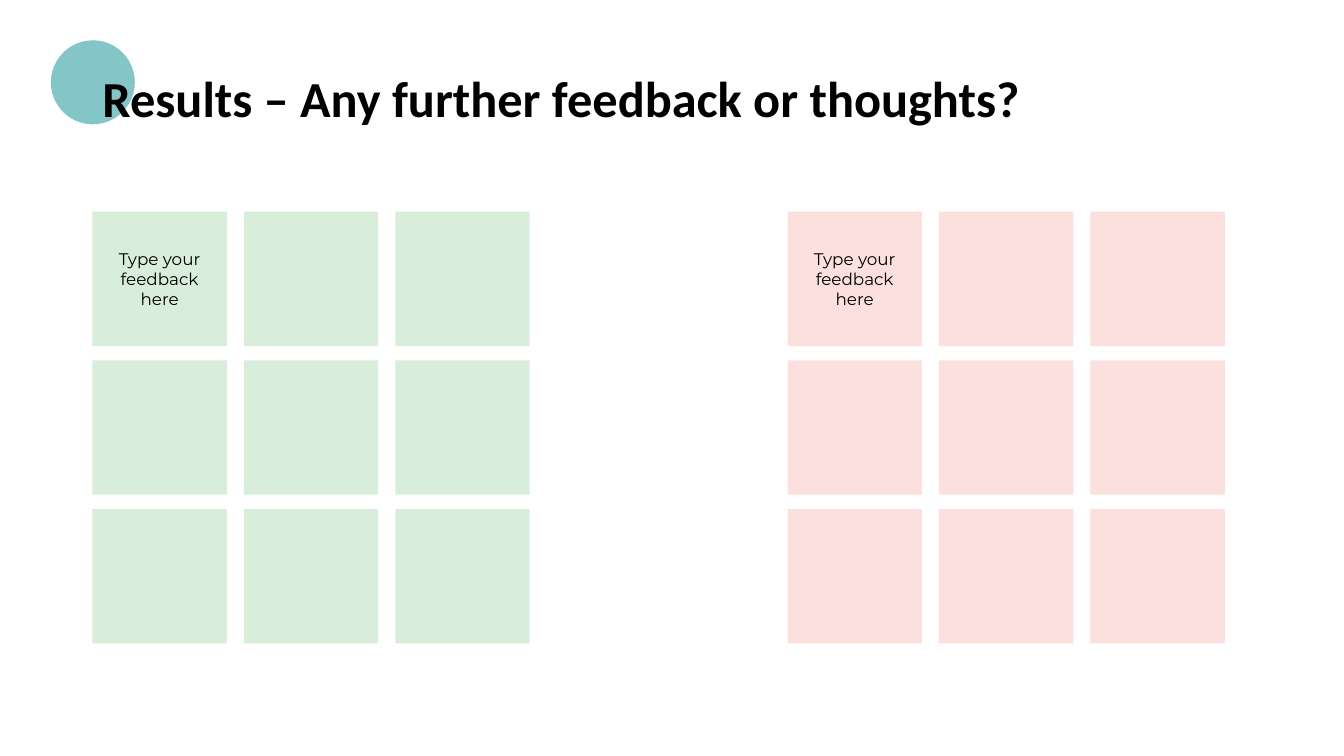
from itertools import product

from lxml.etree import SubElement
from pptx import Presentation
from pptx.dml.color import RGBColor
from pptx.enum.shapes import MSO_SHAPE
from pptx.enum.text import MSO_ANCHOR, MSO_AUTO_SIZE, PP_ALIGN
from pptx.oxml.ns import qn
from pptx.util import Pt

NOTE_SIZE = 96
COLUMN_STEP = 108.2
ROW_STEP = 106.2
GRID_TOP = 151.2


def paint(fill, color, opacity=100):
    fill.solid()
    fill.fore_color.rgb = RGBColor.from_string(color)
    if opacity < 100:
        color_element = fill._xPr.find(qn("a:solidFill"))[0]
        SubElement(color_element, qn("a:alpha"), val=str(opacity * 1000))


def write(shape, text, font, size, anchor, alignment, bold=False):
    frame = shape.text_frame
    frame.text = text
    frame.word_wrap = True
    frame.auto_size = MSO_AUTO_SIZE.NONE
    frame.vertical_anchor = anchor
    paragraph = frame.paragraphs[0]
    paragraph.alignment = alignment
    span = paragraph.runs[0]
    span.font.name = font
    span.font.size = Pt(size)
    span.font.bold = bold
    paint(span.font.fill, "000000")
    return paragraph


def add_shape(slide, kind, left, top, size, color, opacity=100):
    shape = slide.shapes.add_shape(kind, Pt(left), Pt(top), Pt(size), Pt(size))
    shape.shadow.inherit = False
    shape.line.fill.background()
    paint(shape.fill, color, opacity)
    return shape


def add_title(slide, text):
    """Fill the title and set the accent circle behind it."""
    title = slide.shapes.title
    title.left, title.top = Pt(66), Pt(49)
    title.width, title.height = Pt(690.5), Pt(77)
    paragraph = write(title, text, "Calibri", 36, MSO_ANCHOR.TOP, PP_ALIGN.LEFT, bold=True)
    paragraph.line_spacing = 0.9
    circle = add_shape(slide, MSO_SHAPE.OVAL, 36.3, 28.8, 60, "84C5C8")
    title.element.addprevious(circle.element)


def add_note_grid(slide, left, color):
    """Add three rows of three notes, with a prompt in the first."""
    for row, column in product(range(3), repeat=2):
        note = add_shape(slide, MSO_SHAPE.RECTANGLE, left + column * COLUMN_STEP,
                         GRID_TOP + row * ROW_STEP, NOTE_SIZE, color, opacity=30)
        if row == column == 0:
            write(note, "Type your feedback here", "Montserrat", 12,
                  MSO_ANCHOR.MIDDLE, PP_ALIGN.CENTER)


def main():
    deck = Presentation()
    deck.slide_width, deck.slide_height = Pt(960), Pt(540)
    slide = deck.slides.add_slide(deck.slide_layouts[5])
    add_title(slide, "Results – Any further feedback or thoughts?")
    add_note_grid(slide, 66, "83C588")
    add_note_grid(slide, 562.5, "F39A95")
    deck.save("out.pptx")


if __name__ == "__main__":
    main()
